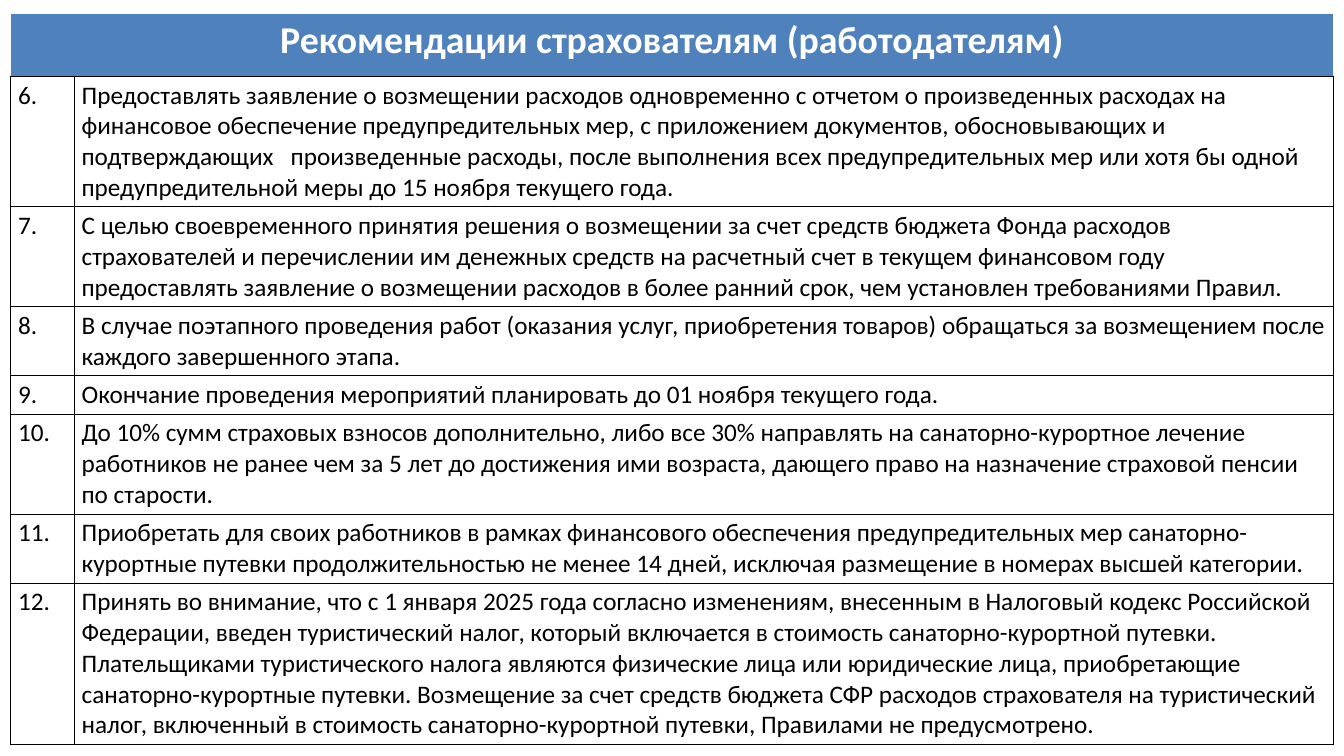
from lxml import etree
from pptx import Presentation
from pptx.dml.color import RGBColor
from pptx.enum.text import PP_ALIGN
from pptx.oxml.ns import qn
from pptx.util import Inches, Pt

CENTER = PP_ALIGN.CENTER
LEFT = PP_ALIGN.LEFT
WHITE = RGBColor(0xFF, 0xFF, 0xFF)
BLACK = RGBColor(0, 0, 0)
BLUE = RGBColor(0x4F, 0x81, 0xBD)
FONT = "Calibri"

TITLE = "Рекомендации страхователям (работодателям)"
FIRST_NUMBER = 6
RECOMMENDATIONS = [
    (4, "Предоставлять заявление о возмещении расходов одновременно с отчетом "
        "о произведенных расходах на финансовое обеспечение предупредительных мер, "
        "с приложением документов, обосновывающих и подтверждающих   произведенные "
        "расходы, после выполнения всех предупредительных мер или хотя бы одной "
        "предупредительной меры до 15 ноября текущего года."),
    (3, "С целью своевременного принятия решения о возмещении за счет средств "
        "бюджета Фонда расходов страхователей и перечислении им денежных средств "
        "на расчетный счет в текущем финансовом году предоставлять заявление "
        "о возмещении расходов в более ранний срок, чем установлен требованиями Правил."),
    (2, "В случае поэтапного проведения работ (оказания услуг, приобретения товаров) "
        "обращаться за возмещением после каждого завершенного этапа."),
    (1, "Окончание проведения мероприятий планировать до 01 ноября текущего года."),
    (3, "До 10% сумм страховых взносов дополнительно, либо все 30% направлять "
        "на санаторно-курортное лечение работников не ранее чем за 5 лет "
        "до достижения ими возраста, дающего право на назначение страховой пенсии "
        "по старости."),
    (2, "Приобретать для своих работников в рамках финансового обеспечения "
        "предупредительных мер санаторно-курортные путевки продолжительностью "
        "не менее 14 дней, исключая размещение в номерах высшей категории."),
    (5, "Принять во внимание, что с 1 января 2025 года согласно изменениям, внесенным "
        "в Налоговый кодекс Российской Федерации, введен туристический налог, который "
        "включается в стоимость санаторно-курортной путевки. Плательщиками "
        "туристического налога являются физические лица или юридические лица, "
        "приобретающие санаторно-курортные путевки. Возмещение за счет средств бюджета "
        "СФР расходов страхователя на туристический налог, включенный в стоимость "
        "санаторно-курортной путевки, Правилами не предусмотрено."),
]

COLUMN_WIDTHS = [0.84, 16.66]
TITLE_HEIGHT = 0.83
LINE_HEIGHT = 0.4
ROW_PADDING = 0.1


def set_borders(cell, left, right, top, bottom):
    properties = cell._tc.get_or_add_tcPr()
    for side, color in zip("LRTB", (left, right, top, bottom)):
        line = etree.SubElement(properties, qn(f"a:ln{side}"), w=str(Pt(1)))
        fill = etree.SubElement(line, qn("a:solidFill"))
        etree.SubElement(fill, qn("a:srgbClr"), val=str(color))


def write_cell(cell, text, size, color, bold=False, align=LEFT):
    cell.text_frame.text = text
    para = cell.text_frame.paragraphs[0]
    para.alignment = align
    font = para.runs[0].font
    font.name = FONT
    font.size = Pt(size)
    font.bold = bold
    font.color.rgb = color


def main():
    deck = Presentation()
    deck.slide_width = Inches(17.78)
    deck.slide_height = Inches(10)
    page = deck.slides.add_slide(deck.slide_layouts[6])

    heights = [TITLE_HEIGHT] + [
        ROW_PADDING + LINE_HEIGHT * lines for lines, _ in RECOMMENDATIONS
    ]
    table = page.shapes.add_table(
        len(heights), len(COLUMN_WIDTHS), Inches(0.14), Inches(0.18),
        Inches(sum(COLUMN_WIDTHS)), Inches(sum(heights)),
    ).table
    table.horz_banding = False
    for column, width in zip(table.columns, COLUMN_WIDTHS):
        column.width = Inches(width)
    for row, height in zip(table.rows, heights):
        row.height = Inches(height)

    title_cell, title_end = table.rows[0].cells
    title_cell.merge(title_end)
    for cell in (title_cell, title_end):
        set_borders(cell, WHITE, WHITE, WHITE, BLACK)
        cell.fill.solid()
        cell.fill.fore_color.rgb = BLUE
    write_cell(title_cell, TITLE, 36, WHITE, True, CENTER)

    for index, (_, advice) in enumerate(RECOMMENDATIONS):
        texts = (f"{FIRST_NUMBER + index}.", advice)
        for column, text in enumerate(texts):
            cell = table.cell(index + 1, column)
            set_borders(cell, BLACK, BLACK, BLACK, BLACK)
            cell.fill.background()
            write_cell(cell, text, 24, BLACK)

    deck.save("out.pptx")


if __name__ == "__main__":
    main()
